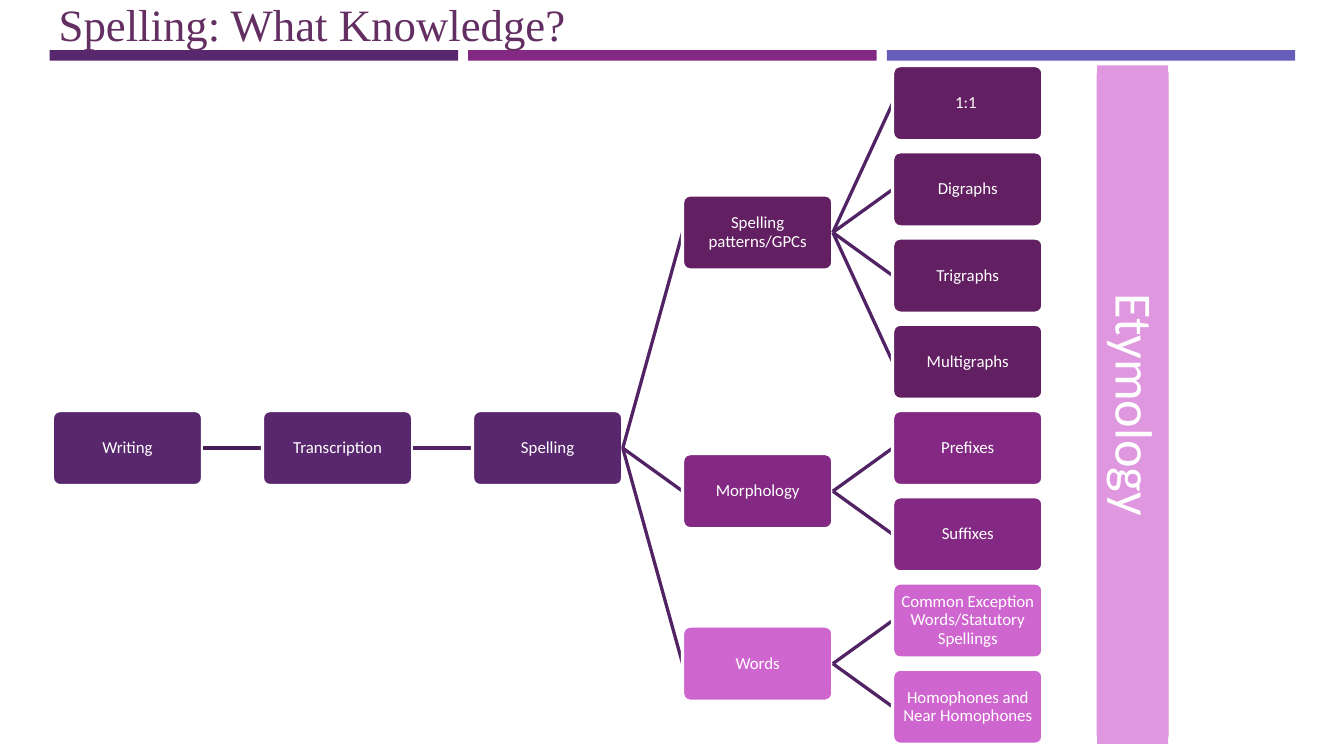
"""Build the spelling knowledge slide: a title, header bars, a tree and a side band."""
from lxml.etree import SubElement
from pptx import Presentation
from pptx.dml.color import RGBColor
from pptx.enum.shapes import MSO_CONNECTOR, MSO_SHAPE
from pptx.enum.text import MSO_ANCHOR, MSO_AUTO_SIZE, PP_ALIGN
from pptx.oxml.ns import qn
from pptx.util import Cm, Pt

WHITE = RGBColor(0xFF, 0xFF, 0xFF)
INDIGO = RGBColor(0x59, 0x27, 0x6E)
PLUM = RGBColor(0x62, 0x1F, 0x62)
PURPLE = RGBColor(0x83, 0x29, 0x83)
ORCHID = RGBColor(0xCF, 0x65, 0xCF)
PINK = RGBColor(0xDF, 0x98, 0xDF)
BLUE = RGBColor(0x66, 0x5E, 0xB8)
TITLE = RGBColor(0x63, 0x2E, 0x62)
LINK = RGBColor(0x51, 0x23, 0x64)
ROOT_LINK = RGBColor(0x47, 0x1F, 0x58)

BOX_W, BOX_H = 2.84, 1.42
TREE_LEFT, TREE_TOP = 0.99, 1.24
COL_STEP, ROW_STEP = 3.97, 1.63

TREE = ("Writing", INDIGO, [
    ("Transcription", INDIGO, [
        ("Spelling", INDIGO, [
            ("Spelling patterns/GPCs", PLUM, [
                ("1:1 ", PLUM, []),
                ("Digraphs", PLUM, []),
                ("Trigraphs", PLUM, []),
                ("Multigraphs", PLUM, []),
            ]),
            ("Morphology", PURPLE, [
                ("Prefixes", PURPLE, []),
                ("Suffixes", PURPLE, []),
            ]),
            ("Words", ORCHID, [
                ("Common Exception Words/Statutory Spellings", ORCHID, []),
                ("Homophones and Near Homophones", ORCHID, []),
            ]),
        ]),
    ]),
])


def add_run(p, text, font, size, color):
    """Append a formatted run to a paragraph."""
    r = p.add_run()
    r.text = text
    r.font.name = font
    r.font.size = Pt(size)
    r.font.color.rgb = color


def add_block(s, kind, left, top, width, height, fill, outlined=False):
    """Add a filled shape, with a white outline if asked."""
    sp = s.shapes.add_shape(kind, Cm(left), Cm(top), Cm(width), Cm(height))
    sp.shadow.inherit = False
    sp.fill.solid()
    sp.fill.fore_color.rgb = fill
    if outlined:
        sp.line.color.rgb = WHITE
        sp.line.width = Pt(1.75)
    else:
        sp.line.fill.background()
    if kind == MSO_SHAPE.ROUNDED_RECTANGLE:
        sp.adjustments[0] = 0.1
    return sp


def add_label(sp, text, size):
    """Write centred white text inside a shape."""
    tf = sp.text_frame
    tf.word_wrap = True
    tf.vertical_anchor = MSO_ANCHOR.MIDDLE
    tf.margin_left = tf.margin_right = tf.margin_top = tf.margin_bottom = Cm(0.03)
    p = tf.paragraphs[0]
    p.alignment = PP_ALIGN.CENTER
    p.line_spacing = 0.9
    add_run(p, text, "Calibri", size, WHITE)


def add_link(s, parent, color):
    """Start a connector at the right side of a parent box."""
    link = s.shapes.add_connector(MSO_CONNECTOR.STRAIGHT, 0, 0, 0, 0)
    link.line.color.rgb = color
    link.line.width = Pt(1.75)
    SubElement(link._element.spPr, qn("a:effectLst"))
    link.begin_connect(parent, 3)
    return link


def count_leaves(node):
    """Count the end boxes under a node."""
    return sum(map(count_leaves, node[2])) or 1


def find_row(node, first):
    """Return the row of a node, midway between its outer children."""
    children = node[2]
    if not children:
        return first
    last = first + count_leaves(node) - count_leaves(children[-1])
    return (find_row(children[0], first) + find_row(children[-1], last)) / 2


def add_branch(s, node, col=0, first=0):
    """Draw a node and everything under it, and return its box."""
    text, color, children = node
    top = TREE_TOP + find_row(node, first) * ROW_STEP
    sp = add_block(s, MSO_SHAPE.ROUNDED_RECTANGLE, TREE_LEFT + col * COL_STEP,
                   top, BOX_W, BOX_H, color, outlined=True)
    add_label(sp, text, 9)
    for child in children:
        link = add_link(s, sp, LINK if col else ROOT_LINK)
        link.end_connect(add_branch(s, child, col + 1, first), 1)
        first += count_leaves(child)
    return sp


def add_header_bars(s):
    """Draw the three bars under the title."""
    for i, color in enumerate((INDIGO, PURPLE, BLUE)):
        add_block(s, MSO_SHAPE.RECTANGLE, 0.94 + i * 7.91, 0.95, 7.72, 0.2, color)


def add_title(s, text):
    """Add the slide title."""
    tb = s.shapes.add_textbox(Cm(0.86), Cm(-0.18), Cm(14.86), Cm(1.27))
    tf = tb.text_frame
    tf.word_wrap = True
    tf.auto_size = MSO_AUTO_SIZE.SHAPE_TO_FIT_TEXT
    add_run(tf.paragraphs[0], text, "Times New Roman", 24, TITLE)


def add_side_band(s, text):
    """Draw the vertical band with its turned label."""
    back = add_block(s, MSO_SHAPE.ROUNDED_RECTANGLE, 14.99, 6.94, 12.83, 1.42,
                     PINK, outlined=True)
    front = add_block(s, MSO_SHAPE.RECTANGLE, 14.99, 6.98, 12.83, 1.34, PINK)
    back.rotation = front.rotation = 90
    add_label(front, text, 28)


def main():
    """Build and save the slide."""
    prs = Presentation()
    prs.slide_width, prs.slide_height = Cm(25.4), Cm(14.29)
    s = prs.slides.add_slide(prs.slide_layouts[6])
    add_header_bars(s)
    add_branch(s, TREE)
    add_title(s, "Spelling: What Knowledge?")
    add_side_band(s, "Etymology")
    prs.save("out.pptx")


if __name__ == "__main__":
    main()
